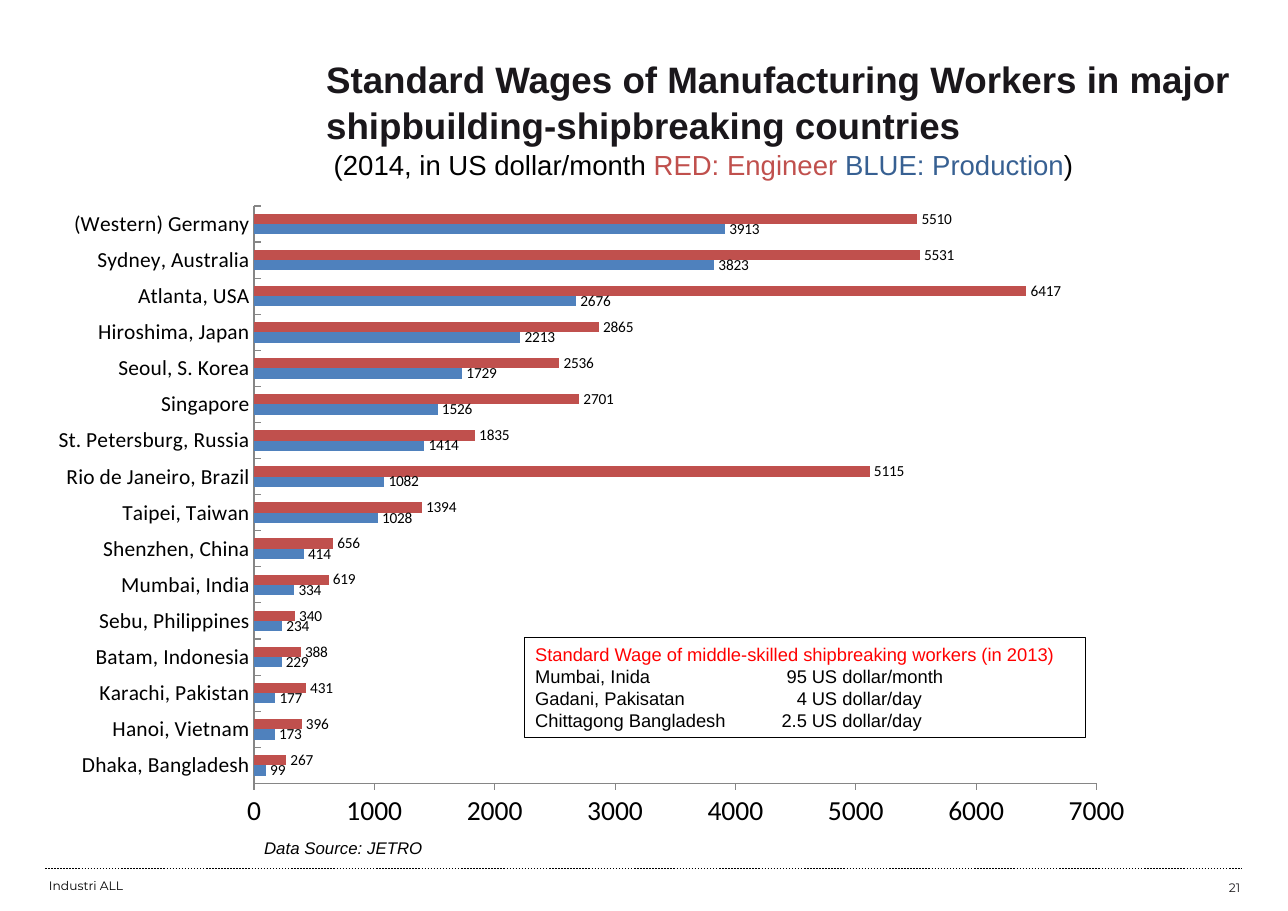
"""Builds the slide on wages in shipbuilding and shipbreaking countries."""
from lxml import etree
from pptx import Presentation
from pptx.chart.data import CategoryChartData
from pptx.dml.color import RGBColor
from pptx.enum import chart as ch, dml, shapes, text
from pptx.oxml import parse_xml
from pptx.oxml.ns import nsdecls, qn
from pptx.util import Cm, Pt

BLACK = RGBColor(0, 0, 0)
DARK = RGBColor(0x1A, 0x17, 0x1B)
RED = RGBColor(0xFF, 0, 0)
ENGINEER = RGBColor(0xC0, 0x50, 0x4D)
PRODUCTION = RGBColor(0x4F, 0x81, 0xBD)
NAVY = RGBColor(0x37, 0x60, 0x92)
GREY = RGBColor(0x86, 0x86, 0x86)

WAGES = [
    ("Dhaka, Bangladesh", 99, 267), ("Hanoi, Vietnam", 173, 396),
    ("Karachi, Pakistan", 177, 431), ("Batam, Indonesia", 229, 388),
    ("Sebu, Philippines", 234, 340), ("Mumbai, India", 334, 619),
    ("Shenzhen, China", 414, 656), ("Taipei, Taiwan", 1028, 1394),
    ("Rio de Janeiro, Brazil", 1082, 5115),
    ("St. Petersburg, Russia", 1414, 1835), ("Singapore", 1526, 2701),
    ("Seoul, S. Korea", 1729, 2536), ("Hiroshima, Japan", 2213, 2865),
    ("Atlanta, USA", 2676, 6417), ("Sydney, Australia", 3823, 5531),
    ("(Western) Germany", 3913, 5510),
]
SHIPBREAKING = [
    ("Mumbai, Inida", "95", "US dollar/month"),
    ("Gadani, Pakisatan", "4", "US dollar/day"),
    ("Chittagong Bangladesh", "2.5", "US dollar/day"),
]


def add_run(p, words, size, color, name="Arial", bold=False, italic=False):
    r = p.add_run()
    r.text = words
    f = r.font
    f.name, f.size, f.bold, f.italic = name, Pt(size), bold, italic
    f.color.rgb = color


def set_frame(tf, x=0.25, y=0.13, anchor=text.MSO_ANCHOR.TOP):
    tf.word_wrap = True
    tf.auto_size = text.MSO_AUTO_SIZE.NONE
    tf.vertical_anchor = anchor
    tf.margin_left = tf.margin_right = Cm(x)
    tf.margin_top = tf.margin_bottom = Cm(y)


def add_label(s, box, words, size, color=BLACK, name="Arial", italic=False,
              align=text.PP_ALIGN.LEFT, anchor=text.MSO_ANCHOR.MIDDLE):
    tf = s.shapes.add_textbox(*map(Cm, box)).text_frame
    set_frame(tf, anchor=anchor)
    p = tf.paragraphs[0]
    p.alignment = align
    add_run(p, words, size, color, name, italic=italic)


def add_title(s):
    sp = s.shapes.title
    sp.left, sp.top, sp.width, sp.height = map(Cm, (7.24, 1.7, 22.45, 2.03))
    tf = sp.text_frame
    set_frame(tf, 0.28, 0.15, text.MSO_ANCHOR.MIDDLE)
    p = tf.paragraphs[0]
    p.alignment = text.PP_ALIGN.LEFT
    p.line_spacing = 1.05
    add_run(p, "Standard Wages of Manufacturing Workers in major "
            "shipbuilding-shipbreaking countries", 24, DARK, bold=True)
    p.add_line_break()
    for words, color in ((" (2014, in US dollar/month ", BLACK),
                         ("RED: Engineer ", ENGINEER),
                         ("BLUE: Production", NAVY), (")", BLACK)):
        add_run(p, words, 18, color)


def set_axis(axis, size, tick):
    axis.has_major_gridlines = False
    axis.major_tick_mark = tick
    axis.minor_tick_mark = ch.XL_TICK_MARK.NONE
    axis.tick_labels.font.size = Pt(size)
    axis.format.line.color.rgb = GREY
    axis.format.line.width = Pt(0.75)


def set_plot_area(chart, **fractions):
    area = chart._chartSpace.chart.plotArea
    for old in area.findall(qn("c:layout")):
        area.remove(old)
    layout = parse_xml(f"<c:layout {nsdecls('c')}><c:manualLayout/></c:layout>")
    parts = [("layoutTarget", "inner"), ("xMode", "edge"), ("yMode", "edge")]
    for tag, val in parts + list(fractions.items()):
        etree.SubElement(layout[0], qn(f"c:{tag}")).set("val", str(val))
    area.insert(0, layout)


def add_wage_chart(s):
    cities, production, engineer = zip(*WAGES)
    data = CategoryChartData()
    data.categories = cities
    data.add_series("Series 1", production)
    data.add_series("Series 2", engineer)
    chart = s.shapes.add_chart(ch.XL_CHART_TYPE.BAR_CLUSTERED, Cm(0.84),
                               Cm(4.45), Cm(25.6), Cm(14.94), data).chart
    chart.has_legend = chart.has_title = False
    chart.font.name, chart.font.size = "Calibri", Pt(18)
    chart.font.color.rgb = BLACK
    set_axis(chart.category_axis, 14, ch.XL_TICK_MARK.INSIDE)
    set_axis(chart.value_axis, 18, ch.XL_TICK_MARK.OUTSIDE)
    chart.value_axis.minimum_scale = 0
    chart.value_axis.maximum_scale = 7000
    chart.value_axis.major_unit = 1000
    plot = chart.plots[0]
    plot.gap_width, plot.overlap, plot.vary_by_categories = 150, 0, False
    for series, color in zip(plot.series, (PRODUCTION, ENGINEER)):
        series.format.fill.solid()
        series.format.fill.fore_color.rgb = color
        labels = series.data_labels
        labels.show_value = True
        labels.position = ch.XL_LABEL_POSITION.OUTSIDE_END
        labels.font.size = Pt(10)
        labels.font.color.rgb = BLACK
    set_plot_area(chart, x=0.196, y=0.02, w=0.759, h=0.891)


def add_tab_stops(p, *stops):
    tabs = etree.SubElement(p._p.get_or_add_pPr(), qn("a:tabLst"))
    for pos, align in stops:
        tab = etree.SubElement(tabs, qn("a:tab"))
        tab.set("pos", str(int(Cm(pos))))
        tab.set("algn", align)


def add_shipbreaking_box(s):
    sp = s.shapes.add_shape(shapes.MSO_SHAPE.RECTANGLE,
                            *map(Cm, (12.09, 14.7, 12.95, 2.31)))
    sp.shadow.inherit = False
    sp.fill.background()
    sp.line.color.rgb = BLACK
    sp.line.width = Pt(0.75)
    tf = sp.text_frame
    set_frame(tf)
    p = tf.paragraphs[0]
    p.alignment = text.PP_ALIGN.LEFT
    add_run(p, "Standard Wage of middle-skilled shipbreaking workers (in 2013)",
            12, RED)
    for row in SHIPBREAKING:
        p = tf.add_paragraph()
        p.alignment = text.PP_ALIGN.LEFT
        add_tab_stops(p, (6.27, "r"), (6.38, "l"))
        add_run(p, "\t".join(row), 12, BLACK)


def add_footer(s):
    c = s.shapes.add_connector(shapes.MSO_CONNECTOR.STRAIGHT,
                               Cm(1.04), Cm(20.02), Cm(28.65), Cm(20.02))
    c.line.color.rgb = BLACK
    c.line.width = Pt(1)
    c.line.dash_style = dml.MSO_LINE.ROUND_DOT
    etree.SubElement(c._element.spPr, qn("a:effectLst"))
    add_label(s, (0.88, 20.19, 15.39, 0.43), "Industri ALL", 8,
              name="Montserrat")
    add_label(s, (21.92, 20.22, 6.93, 0.48), "21", 8, DARK, "Montserrat",
              align=text.PP_ALIGN.RIGHT)


def main():
    prs = Presentation()
    prs.slide_width, prs.slide_height = Cm(29.7), Cm(21)
    s = prs.slides.add_slide(prs.slide_layouts[5])
    add_footer(s)
    add_title(s)
    add_wage_chart(s)
    add_label(s, (5.84, 19.18, 8.41, 0.74), "Data Source: JETRO", 11,
              italic=True, anchor=text.MSO_ANCHOR.TOP)
    add_shipbreaking_box(s)
    prs.save("out.pptx")


if __name__ == "__main__":
    main()
